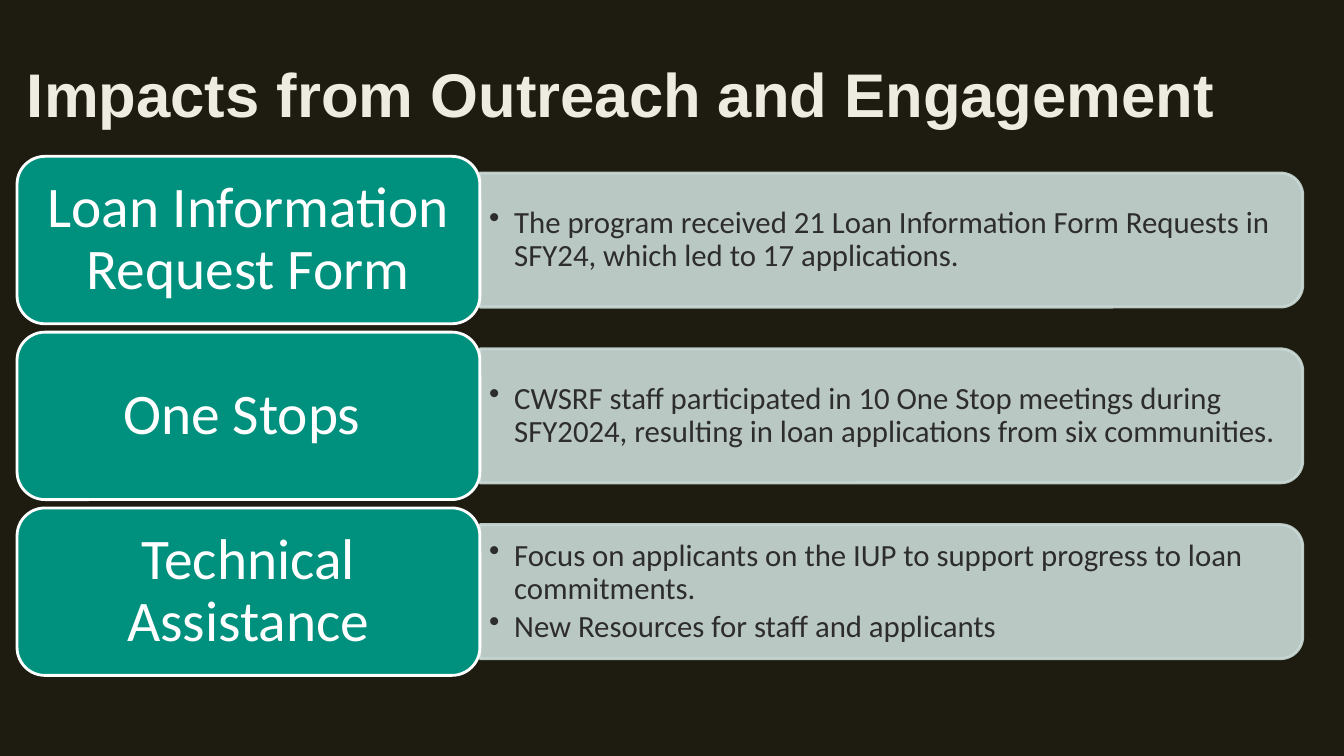
from lxml import etree
from pptx import Presentation
from pptx import util as u
from pptx.dml.color import RGBColor
from pptx.enum import shapes, text
from pptx.oxml import ns

DARK = RGBColor(0x1E, 0x1C, 0x11)
CREAM = RGBColor(0xEE, 0xEC, 0xE1)
TEAL = RGBColor(0x00, 0x90, 0x7E)
MIST = RGBColor(0xCC, 0xDB, 0xD8)
WHITE = RGBColor(0xFF, 0xFF, 0xFF)
INK = RGBColor(0x2D, 0x2D, 0x2D)

# Row geometry in cm
LEFT, TOP, PITCH = 0.43, 3.94, 4.43
CARD_W, CARD_H = 11.66, 4.22
BAR_W, BAR_H = 20.73, 3.38
NOTE_W, NOTE_H = 20.57, 3.05

ROWS = [
    ("Loan Information Request Form",
     ["The program received 21 Loan Information Form Requests in SFY24, "
      "which led to 17 applications."]),
    ("One Stops ",
     ["CWSRF staff participated in 10 One Stop meetings during SFY2024, "
      "resulting in loan applications from six communities."]),
    ("Technical Assistance",
     ["Focus on applicants on the IUP to support progress to loan commitments.",
      "New Resources for staff and applicants"]),
]


class Deck:
    """Holds the style and the current slide."""

    font = "Calibri"

    def __init__(self):
        self.prs = Presentation()
        self.prs.slide_width, self.prs.slide_height = u.Inches(13.33), u.Inches(7.5)
        self.slide = self.prs.slides.add_slide(self.prs.slide_layouts[5])
        back = self.slide.background.fill
        back.solid()
        back.fore_color.rgb = DARK

    def frame(self, shape, side=0.25, edge=0.13):
        tf = shape.text_frame
        tf.word_wrap = True
        tf.auto_size = text.MSO_AUTO_SIZE.NONE
        tf.vertical_anchor = text.MSO_ANCHOR.MIDDLE
        tf.margin_left = tf.margin_right = u.Cm(side)
        tf.margin_top = tf.margin_bottom = u.Cm(edge)
        return tf

    def run(self, para, words, size, color, font=None, bold=False):
        run = para.add_run()
        run.text = words
        run.font.name = font or self.font
        run.font.size = u.Pt(size)
        run.font.bold = bold
        run.font.color.rgb = color

    def title(self, words):
        box = self.slide.shapes.title
        box.left, box.top = u.Cm(LEFT), u.Cm(0.76)
        box.width, box.height = u.Cm(33.02), u.Cm(3.18)
        para = self.frame(box).paragraphs[0]
        para.alignment = text.PP_ALIGN.LEFT
        self.run(para, words, 44, CREAM, "Arial", True)

    def shape(self, kind, x, y, w, h, fill, line):
        item = self.slide.shapes.add_shape(kind, u.Cm(x), u.Cm(y), u.Cm(w), u.Cm(h))
        item.shadow.inherit = False
        item.fill.solid()
        item.fill.fore_color.rgb = fill
        item.line.color.rgb = line
        item.line.width = u.Pt(2)
        return item

    def bar(self, x, mid):
        # Turned a quarter so that the rounded end points right
        item = self.shape(shapes.MSO_SHAPE.ROUND_2_SAME_RECTANGLE,
                          x + (BAR_W - BAR_H) / 2, mid - BAR_W / 2,
                          BAR_H, BAR_W, MIST, MIST)
        item.rotation = 90
        for color in item.element.spPr.iter(ns.qn("a:srgbClr")):
            etree.SubElement(color, ns.qn("a:alpha"), val="90000")

    def card(self, words, x, mid):
        item = self.shape(shapes.MSO_SHAPE.ROUNDED_RECTANGLE, x, mid - CARD_H / 2,
                          CARD_W, CARD_H, TEAL, WHITE)
        para = self.frame(item, 0.43, 0.23).paragraphs[0]
        para.alignment = text.PP_ALIGN.CENTER
        para.line_spacing = 0.9
        para.space_after = u.Pt(14)
        self.run(para, words, 41, WHITE)

    def notes(self, points, x, mid):
        box = self.slide.shapes.add_textbox(u.Cm(x), u.Cm(mid - NOTE_H / 2),
                                            u.Cm(NOTE_W), u.Cm(NOTE_H))
        tf = self.frame(box, 0.23)
        for i, point in enumerate(points):
            para = tf.add_paragraph() if i else tf.paragraphs[0]
            para.level = 1
            para.line_spacing = 0.9
            para.space_after = u.Pt(3.3)
            props = para._p.get_or_add_pPr()
            props.set("marL", str(u.Inches(0.25)))
            props.set("indent", str(-u.Inches(0.25)))
            etree.SubElement(props, ns.qn("a:buChar"), char="•")
            self.run(para, point, 22, INK)


def main():
    deck = Deck()
    deck.title("Impacts from Outreach and Engagement")

    # One row each: bar behind, its points, then the card
    for i, (name, points) in enumerate(ROWS):
        mid = TOP + CARD_H / 2 + i * PITCH
        deck.bar(LEFT + CARD_W, mid)
        deck.notes(points, LEFT + CARD_W, mid)
        deck.card(name, LEFT, mid)

    deck.prs.save("out.pptx")


if __name__ == "__main__":
    main()
